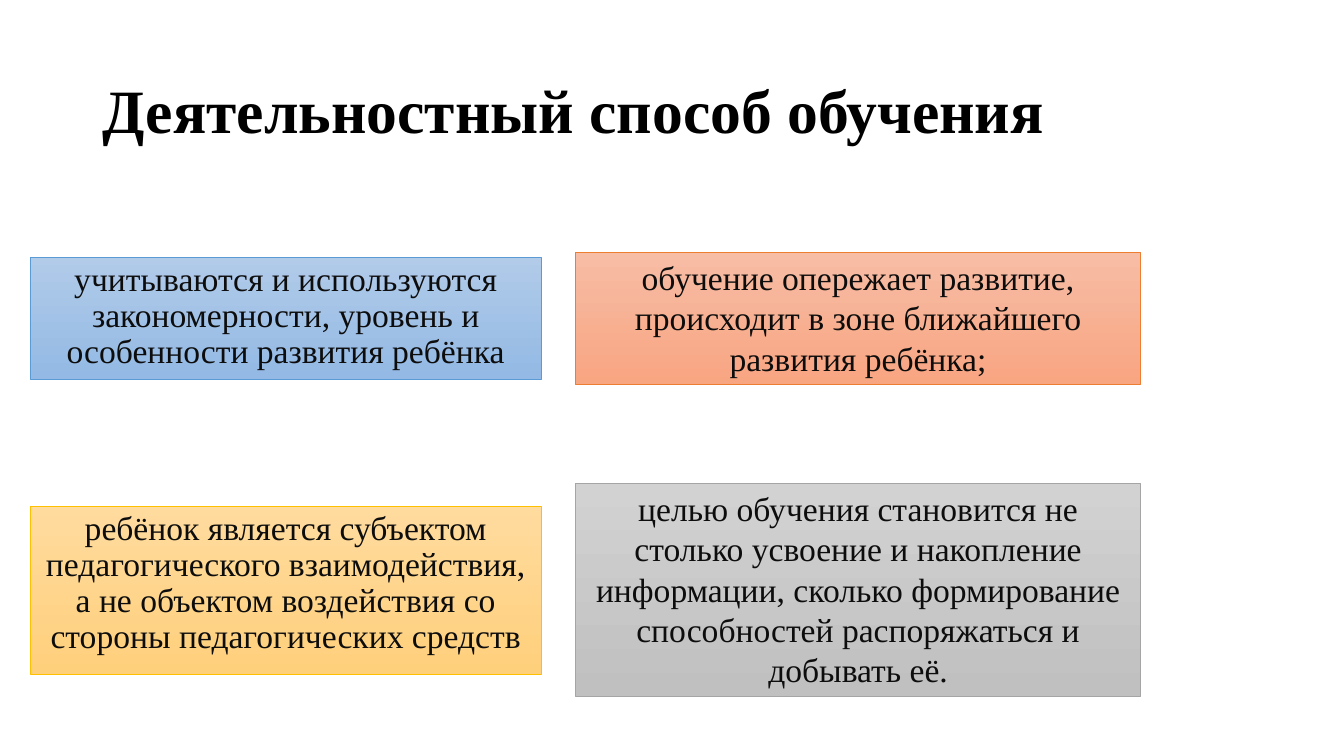
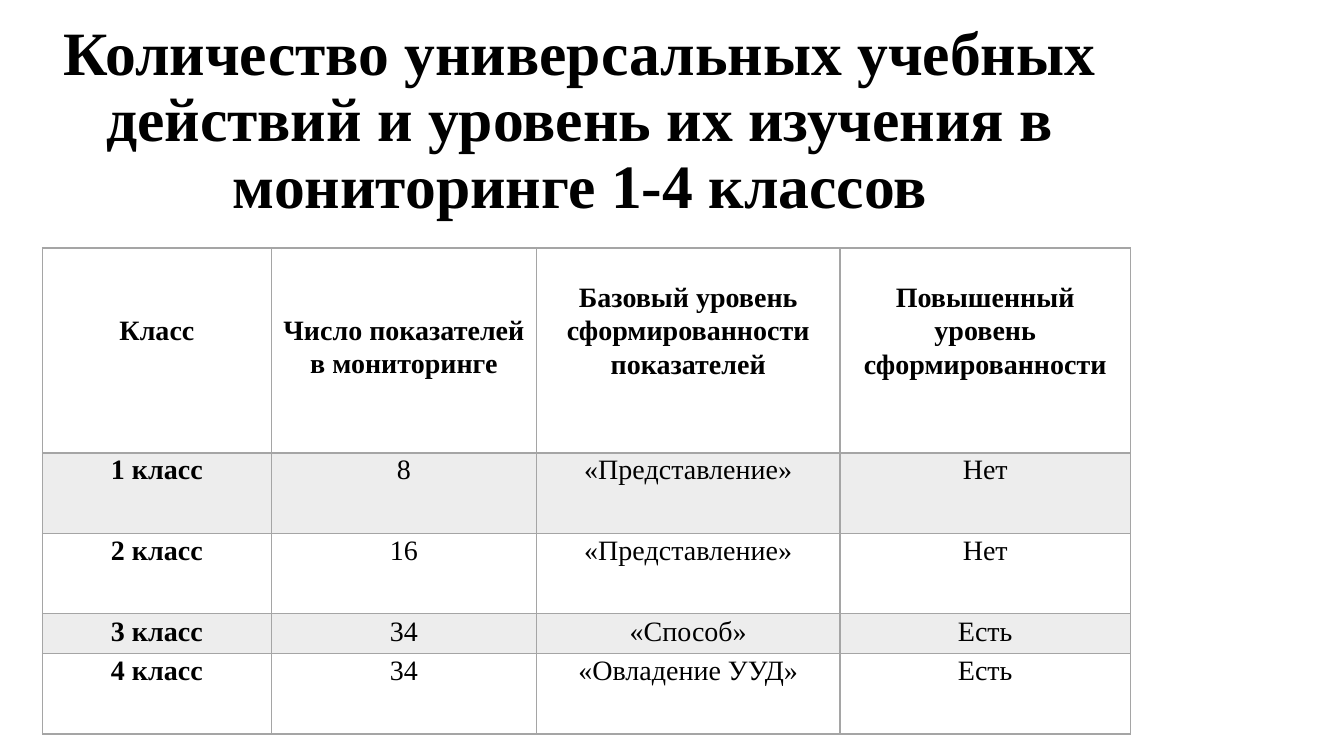
import pptx
import pptx.util
import pptx.dml.color
import pptx.enum.shapes
import pptx.enum.text
import pptx.oxml
import pptx.oxml.ns

Cm = pptx.util.Cm
Pt = pptx.util.Pt
ALIGN = pptx.enum.text.PP_ALIGN
ANCHOR = pptx.enum.text.MSO_ANCHOR

# Shared style
FONT = "Times New Roman"
BLACK = "000000"
BODY_TEXT = "0D0D0D"
GRAY = "A5A5A5"
BAND = "EDEDED"
BLUE_BOX = ("B1CBE9", "93B9E4", "5B9BD5")
GOLD_BOX = ("FFDB9E", "FFD07C", "FFC000")
ORANGE_BOX = ("F7BDA5", "F8A582", "ED7D31")
GRAY_BOX = ("D2D2D2", "C0C0C0", GRAY)
TITLE_ONLY, TWO_CONTENT = 5, 3


def color(hex_text):
    return pptx.dml.color.RGBColor.from_string(hex_text)


def write_text(frame, text, size=24, bold=False, ink=BODY_TEXT,
               align=ALIGN.CENTER, spacing=1.0):
    """Write one formatted paragraph into a text frame."""
    frame.word_wrap = True
    paragraph = frame.paragraphs[0]
    paragraph.alignment = align
    paragraph.line_spacing = spacing
    paragraph.space_before = Pt(0)
    run = paragraph.add_run()
    run.text = text
    run.font.name = FONT
    run.font.size = Pt(size)
    run.font.bold = bold
    run.font.color.rgb = color(ink)


def place(shape, box):
    shape.left, shape.top, shape.width, shape.height = [Cm(length) for length in box]


def add_title(slide, text, box, align):
    title = slide.shapes.title
    place(title, box)
    title.text_frame.auto_size = pptx.enum.text.MSO_AUTO_SIZE.NONE
    title.text_frame.vertical_anchor = ANCHOR.MIDDLE
    write_text(title.text_frame, text, size=44, bold=True, ink=BLACK,
               align=align, spacing=0.9)


def style_box(shape, text, colors, spacing):
    """Give a box its vertical gradient, outline and centred text."""
    start, end, outline = colors
    shape.fill.gradient()
    shape.fill.gradient_angle = 270
    for stop, hex_text in zip(shape.fill.gradient_stops, (start, end)):
        stop.color.rgb = color(hex_text)
    shape.line.color.rgb = color(outline)
    shape.line.width = Pt(0.5)
    shape.text_frame.auto_size = pptx.enum.text.MSO_AUTO_SIZE.NONE
    shape.text_frame.vertical_anchor = ANCHOR.TOP
    write_text(shape.text_frame, text, spacing=spacing)


def fill_body(placeholder, box, text, colors):
    """Turn a body placeholder into a coloured box without a bullet."""
    place(placeholder, box)
    properties = placeholder.text_frame.paragraphs[0]._p.get_or_add_pPr()
    properties.set("marL", "0")
    properties.set("indent", "0")
    properties.append(pptx.oxml.parse_xml(
        f"<a:buNone {pptx.oxml.ns.nsdecls('a')}/>"))
    style_box(placeholder, text, colors, 0.9)


def add_box(slide, box, text, colors):
    shape = slide.shapes.add_shape(
        pptx.enum.shapes.MSO_SHAPE.RECTANGLE, *[Cm(length) for length in box])
    shape.shadow.inherit = False
    style_box(shape, text, colors, 1.0)


def set_borders(cell, **widths):
    """Draw the cell borders; widths are points keyed by side L, R, T, B."""
    properties = cell._tc.get_or_add_tcPr()
    for index, (side, width) in enumerate(widths.items()):
        properties.insert(index, pptx.oxml.parse_xml(
            f'<a:ln{side} {pptx.oxml.ns.nsdecls("a")} w="{Pt(width)}">'
            f'<a:solidFill><a:srgbClr val="{GRAY}"/></a:solidFill>'
            f'</a:ln{side}>'))


def add_levels_table(slide, left, top, columns, heights, rows, header_offsets):
    """Add the table; header offsets are the space above each heading."""
    table = slide.shapes.add_table(
        len(rows), len(columns), Cm(left), Cm(top),
        Cm(sum(columns)), Cm(sum(heights))).table
    for column, width in zip(table.columns, columns):
        column.width = Cm(width)
    for row, height in zip(table.rows, heights):
        row.height = Cm(height)
    for row_index, texts in enumerate(rows):
        header = row_index == 0
        for column_index, text in enumerate(texts):
            cell = table.cell(row_index, column_index)
            cell.margin_left = cell.margin_right = Cm(0.18)
            cell.margin_top = Cm(header_offsets[column_index] if header else 0)
            cell.margin_bottom = Cm(0)
            cell.vertical_anchor = ANCHOR.TOP
            if row_index % 2:
                cell.fill.solid()
                cell.fill.fore_color.rgb = color(BAND)
            else:
                cell.fill.background()
            set_borders(cell, L=1, R=1, T=2 if row_index == 1 else 1,
                        B=2 if header else 1)
            write_text(cell.text_frame, text, size=20, ink=BLACK,
                       bold=header or column_index == 0, spacing=1.07)


def build_method_slide(presentation):
    slide = presentation.slides.add_slide(presentation.slide_layouts[TWO_CONTENT])
    add_title(slide, "Деятельностный способ обучения",
              (2.34, 1.02, 29.21, 3.68), ALIGN.LEFT)
    # Left column
    left, width = 0.76, 12.88
    fill_body(slide.placeholders[1], (left, 6.48, width, 3.07),
              "учитываются и используются закономерности, уровень и "
              "особенности развития ребёнка", BLUE_BOX)
    fill_body(slide.placeholders[2], (left, 12.75, width, 4.24),
              "ребёнок является субъектом педагогического взаимодействия, "
              "а не объектом воздействия со стороны педагогических средств",
              GOLD_BOX)
    # Right column
    left, width = 14.5, 14.25
    add_box(slide, (left, 6.35, width, 3.33),
            "обучение опережает развитие, происходит в зоне ближайшего "
            "развития ребёнка;", ORANGE_BOX)
    add_box(slide, (left, 12.17, width, 5.38),
            "целью обучения становится не столько усвоение и накопление "
            "информации, сколько формирование способностей распоряжаться и "
            "добывать её.", GRAY_BOX)


def build_levels_slide(presentation):
    slide = presentation.slides.add_slide(presentation.slide_layouts[TITLE_ONLY])
    add_title(slide, "Количество универсальных учебных действий и уровень "
              "их изучения в мониторинге 1-4 классов",
              (0.61, 0.43, 28.02, 5.28), ALIGN.CENTER)
    rows = [
        ("Класс", "Число показателей в мониторинге",
         "Базовый уровень сформированности показателей",
         "Повышенный уровень сформированности"),
        ("1 класс", "8", "«Представление»", "Нет"),
        ("2 класс", "16", "«Представление»", "Нет"),
        ("3 класс", "34", "«Способ»", "Есть"),
        ("4 класс", "34", "«Овладение УУД»", "Есть"),
    ]
    add_levels_table(slide, 1.07, 6.25, columns=(5.77, 6.68, 7.65, 7.32),
                     heights=(5.16, 2.03, 2.03, 1, 2.03), rows=rows,
                     header_offsets=(1.64, 1.64, 0.82, 0.82))


def main():
    presentation = pptx.Presentation()
    presentation.slide_width = Cm(33.87)
    presentation.slide_height = Cm(19.05)
    build_method_slide(presentation)
    build_levels_slide(presentation)
    presentation.save("out.pptx")


if __name__ == "__main__":
    main()
